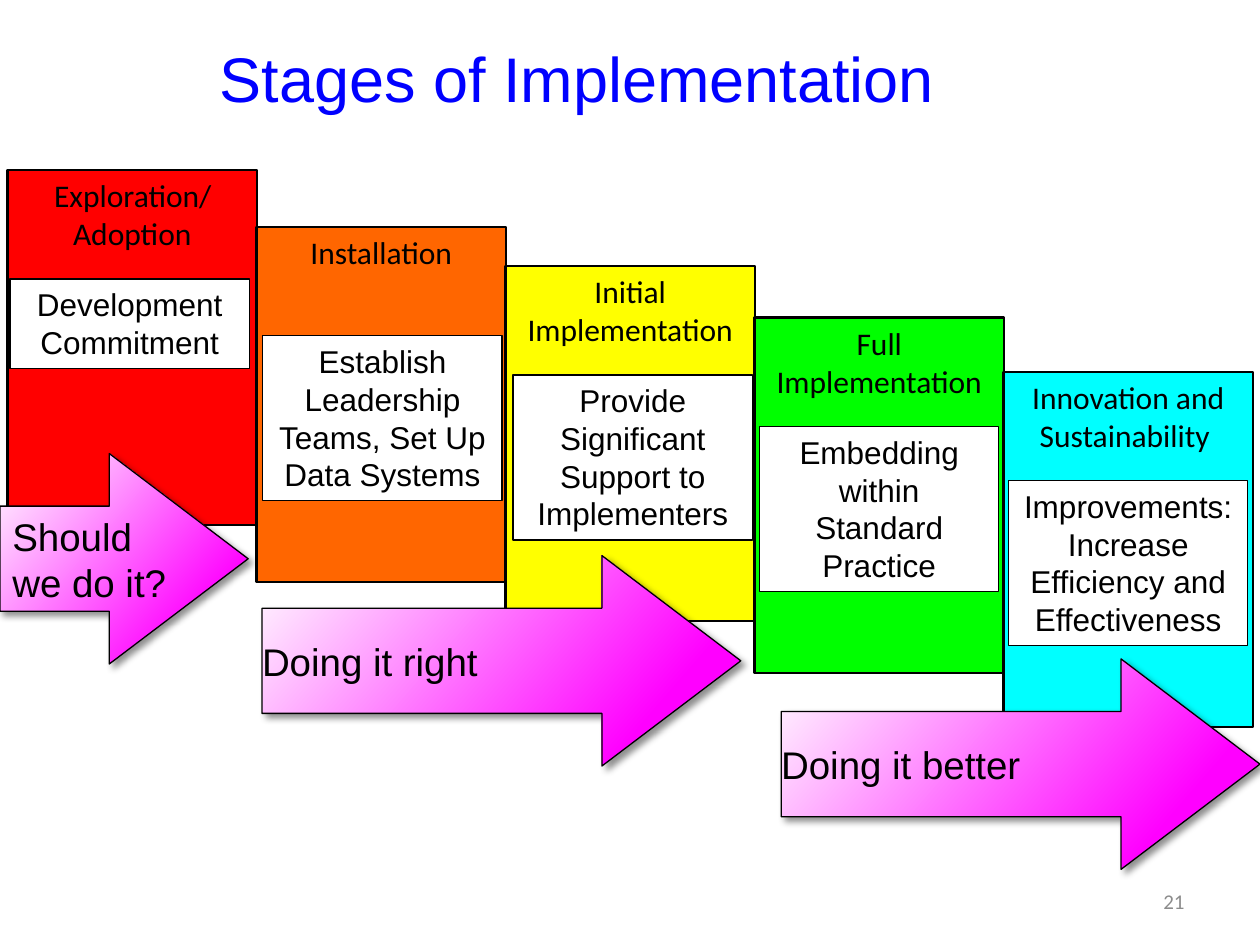
from lxml.etree import SubElement
from pptx import Presentation
from pptx.dml.color import RGBColor
from pptx.enum.shapes import MSO_SHAPE
from pptx.enum.text import MSO_ANCHOR, PP_ALIGN
from pptx.oxml.ns import qn
from pptx.util import Inches, Pt

COLUMNS, ROWS = 100, 75
STAGE_LEFT, STAGE_PITCH = 0.6, 19.76
STAGE_SIZE = (19.8, 28.2)
CARD_DROP, CARD_WIDTH = 8.65, 19
ARROW_HEIGHT = 16.7

STAGES = [
    ("Exploration/Adoption", "FF0000", 13.5, "Development Commitment", 0.2, 7.1),
    ("Installation", "FF6600", 18, "Establish Leadership Teams, Set Up Data Systems", 0.5, 13.1),
    ("Initial Implementation", "FFFF00", 21.1,
     "Provide Significant Support to Implementers", 0.6, 13.1),
    ("Full Implementation", "00FF00", 25.2, "Embedding within Standard Practice", 0.4, 13.1),
    ("Innovation and Sustainability ", "00FFFF", 29.5,
     "Improvements: Increase Efficiency and Effectiveness", 0.4, 13.1),
]
ARROWS = [
    ("Should we do it?", 0, 36, 19.7, True),
    ("Doing it right", 20.8, 44.1, 38, False),
    ("Doing it better", 62, 52.3, 38, False),
]


def color(value):
    return RGBColor.from_string(value)


def apply(target, values):
    for name, value in values.items():
        setattr(target, name, value)


class StageSlide:
    """Draw the elements of the current slide on a grid in one style."""

    title = {"name": "Arial", "size": Pt(36)}
    heading = {"name": "Calibri", "size": Pt(18)}
    body = {"name": "Arial", "size": Pt(18)}
    question = {"name": "Arial", "size": Pt(22)}
    number = {"name": "Calibri", "size": Pt(12)}

    def __init__(self, presentation):
        self.slide = presentation.slides.add_slide(presentation.slide_layouts[6])
        self.column = presentation.slide_width / COLUMNS
        self.row = presentation.slide_height / ROWS

    def place(self, left, top, width, height):
        return (round(left * self.column), round(top * self.row),
                round(width * self.column), round(height * self.row))

    def set_text(self, shape, text, font, ink="000000", align=PP_ALIGN.CENTER, **frame):
        apply(shape.text_frame, {"word_wrap": True, "vertical_anchor": MSO_ANCHOR.TOP, **frame})
        paragraph = shape.text_frame.paragraphs[0]
        paragraph.alignment = align
        run = paragraph.add_run()
        run.text = text
        apply(run.font, font)
        run.font.color.rgb = color(ink)

    def label(self, text, area, font, ink, align):
        box = self.slide.shapes.add_textbox(*self.place(*area))
        self.set_text(box, text, font, ink, align, vertical_anchor=MSO_ANCHOR.MIDDLE)

    def outline(self, kind, area, weight):
        shape = self.slide.shapes.add_shape(kind, *self.place(*area))
        shape.shadow.inherit = False
        shape.line.color.rgb = color("000000")
        shape.line.width = Pt(weight)
        return shape

    def block(self, text, area, font, fill, weight):
        shape = self.outline(MSO_SHAPE.RECTANGLE, area, weight)
        shape.fill.solid()
        shape.fill.fore_color.rgb = color(fill)
        self.set_text(shape, text, font)

    def arrow(self, text, area, wraps):
        shape = self.outline(MSO_SHAPE.RIGHT_ARROW, area, 0.75)
        shape.adjustments[0], shape.adjustments[1] = 0.5, 0.66
        shape.fill.gradient()
        shape.fill.gradient_angle = 139
        for stop, (position, value) in zip(shape.fill.gradient_stops,
                                           [(0.2, "FF00FF"), (1, "FFFFFF")]):
            stop.position = position
            stop.color.rgb = color(value)
        self.cast_shadow(shape)
        self.set_text(shape, text, self.question, align=PP_ALIGN.LEFT,
                      vertical_anchor=MSO_ANCHOR.MIDDLE, word_wrap=wraps,
                      margin_left=Inches(0.1 if wraps else 0), margin_right=0)

    def cast_shadow(self, shape):
        effects = shape.element.spPr.find(qn("a:effectLst"))
        shadow = SubElement(effects, qn("a:outerShdw"), blurRad=str(Pt(4)), dist=str(Pt(3)),
                            dir="2700000", algn="ctr", rotWithShape="0")
        ink = SubElement(shadow, qn("a:srgbClr"), val="000000")
        SubElement(ink, qn("a:alpha"), val="43000")


def main():
    presentation = Presentation()
    presentation.slide_width, presentation.slide_height = Inches(10), Inches(7.5)
    page = StageSlide(presentation)
    page.label("Stages of Implementation", (0, 3.7, 91.6, 4.8), page.title,
               "0000FF", PP_ALIGN.CENTER)
    lefts = [STAGE_LEFT + index * STAGE_PITCH for index in range(len(STAGES))]
    for left, (name, fill, top, *_) in zip(lefts, STAGES):
        page.block(name, (left, top, *STAGE_SIZE), page.heading, fill, 1.25)
    for left, (_, _, top, activity, shift, height) in zip(lefts, STAGES):
        page.block(activity, (left + shift, top + CARD_DROP, CARD_WIDTH, height),
                   page.body, "FFFFFF", 0.75)
    for text, left, top, width, wraps in ARROWS:
        page.arrow(text, (left, top, width, ARROW_HEIGHT), wraps)
    page.label("21", (71.7, 69.5, 23.3, 4), page.number, "8C8C8C", PP_ALIGN.RIGHT)
    presentation.save("out.pptx")


if __name__ == "__main__":
    main()
